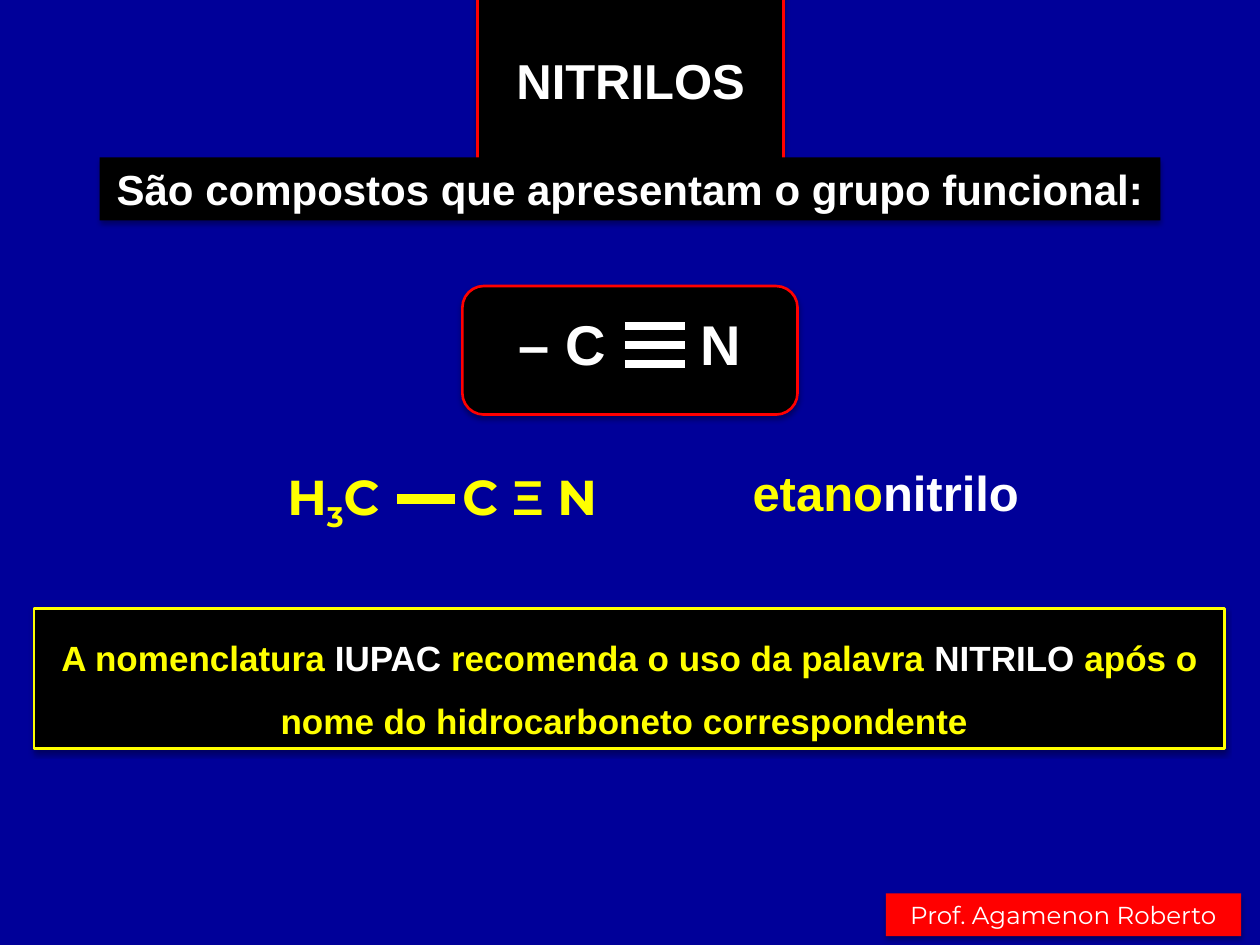
"""Build the slide that introduces the nitrile functional group."""
from dataclasses import dataclass

import lxml.etree
import pptx
import pptx.dml.color
import pptx.enum.shapes
import pptx.enum.text
import pptx.oxml.ns
import pptx.util

Inches = pptx.util.Inches
Pt = pptx.util.Pt
qn = pptx.oxml.ns.qn
Anchor = pptx.enum.text.MSO_ANCHOR
Align = pptx.enum.text.PP_ALIGN
Preset = pptx.enum.shapes.MSO_SHAPE

BLACK, WHITE, YELLOW, RED, NAVY = "000000", "FFFFFF", "FFFF00", "FF0000", "000099"


@dataclass(frozen=True)
class Piece:
    text: str
    color: str = WHITE
    font: str = "Arial"
    bold: bool = True
    baseline: int = 0


@dataclass(frozen=True)
class Label:
    box: tuple[float, float, float, float]
    pieces: tuple[Piece, ...]
    size: float
    fill: str | None = None
    border: str | None = None
    anchor: Anchor = Anchor.TOP
    wrap: bool = False
    spacing: float = 1.0


@dataclass(frozen=True)
class Bond:
    left: float
    right: float
    y: float
    color: str
    width: float


def rgb(color: str) -> pptx.dml.color.RGBColor:
    return pptx.dml.color.RGBColor.from_string(color)


def add_shadow(shape) -> None:
    shape.shadow.inherit = False
    effects = shape._element.spPr.find(qn("a:effectLst"))
    shadow = lxml.etree.SubElement(
        effects, qn("a:outerShdw"), blurRad=str(Pt(3.1)), dist=str(Pt(1.8)),
        dir="5400000", rotWithShape="0")
    color = lxml.etree.SubElement(shadow, qn("a:srgbClr"), val=BLACK)
    lxml.etree.SubElement(color, qn("a:alpha"), val="35000")


def style_panel(shape, fill: str, border: str | None) -> None:
    shape.fill.solid()
    shape.fill.fore_color.rgb = rgb(fill)
    if border:
        shape.line.color.rgb = rgb(border)
        shape.line.width = Pt(1.5)
    else:
        shape.line.fill.background()
    add_shadow(shape)


def write_label(shape, label: Label) -> None:
    shape.left, shape.top, shape.width, shape.height = map(Inches, label.box)
    if label.fill:
        style_panel(shape, label.fill, label.border)
    frame = shape.text_frame
    frame.word_wrap = label.wrap
    frame.auto_size = pptx.enum.text.MSO_AUTO_SIZE.SHAPE_TO_FIT_TEXT
    frame.vertical_anchor = label.anchor
    paragraph = frame.paragraphs[0]
    paragraph.alignment = Align.CENTER
    paragraph.line_spacing = label.spacing
    for piece in label.pieces:
        run = paragraph.add_run()
        run.text = piece.text
        run.font.size = Pt(label.size)
        run.font.name = piece.font
        run.font.bold = piece.bold
        run.font.color.rgb = rgb(piece.color)
        if piece.baseline:
            run._r.get_or_add_rPr().set("baseline", str(piece.baseline * 1000))


def add_label(shapes, label: Label):
    box = tuple(map(Inches, label.box))
    shape = shapes.add_shape(Preset.RECTANGLE, *box) if label.fill else shapes.add_textbox(*box)
    write_label(shape, label)
    return shape


def add_bond(shapes, bond: Bond) -> None:
    connector = shapes.add_connector(
        pptx.enum.shapes.MSO_CONNECTOR.STRAIGHT,
        Inches(bond.left), Inches(bond.y), Inches(bond.right), Inches(bond.y))
    connector.line.color.rgb = rgb(bond.color)
    connector.line.width = Pt(bond.width)
    lxml.etree.SubElement(connector._element.spPr, qn("a:effectLst"))


def add_functional_group(slide) -> None:
    shapes = slide.shapes.add_group_shape().shapes
    panel = shapes.add_shape(
        Preset.ROUNDED_RECTANGLE, Inches(3.67), Inches(2.27), Inches(2.66), Inches(1.02))
    style_panel(panel, BLACK, RED)
    add_label(shapes, Label((4.02, 2.41, 0.89, 0.63), (Piece("– C"),), 32))
    add_label(shapes, Label((5.46, 2.41, 0.52, 0.63), (Piece("N"),), 32))
    for index in range(3):
        add_bond(shapes, Bond(4.96, 5.44, 2.59 + 0.15 * index, WHITE, 4.5))


def add_formula(slide) -> None:
    shapes = slide.shapes.add_group_shape().shapes
    pieces = (
        Piece("H", YELLOW, "Montserrat"),
        Piece("3", YELLOW, "Montserrat", baseline=-25),
        Piece("C\tC ", YELLOW, "Montserrat"),
        Piece("Ξ", YELLOW),
        Piece(" N", YELLOW, "Montserrat"),
    )
    formula = add_label(shapes, Label((2.05, 3.65, 2.95, 0.57), pieces, 28, wrap=True))
    formula.text_frame.margin_left = Inches(0.23)
    paragraph = formula.text_frame.paragraphs[0]
    paragraph.alignment = Align.LEFT
    stops = lxml.etree.SubElement(paragraph._p.get_or_add_pPr(), qn("a:tabLst"))
    lxml.etree.SubElement(stops, qn("a:tab"), pos=str(Inches(1.39)), algn="l")
    add_bond(shapes, Bond(3.15, 3.61, 3.96, YELLOW, 6))


def main() -> None:
    presentation = pptx.Presentation()
    presentation.slide_width = Inches(10)
    presentation.slide_height = Inches(7.5)
    slide = presentation.slides.add_slide(presentation.slide_layouts[5])
    slide.background.fill.solid()
    slide.background.fill.fore_color.rgb = rgb(NAVY)

    title = Label((3.79, 0.35, 2.43, 0.57), (Piece("NITRILOS"),), 28,
                  BLACK, RED, Anchor.MIDDLE, True)
    definition = Label((0.79, 1.25, 8.42, 0.5),
                       (Piece("São compostos que apresentam o grupo funcional:"),),
                       24, BLACK, anchor=Anchor.MIDDLE)
    naming_rule = Label((0.27, 4.83, 9.45, 1.11), (
        Piece("A nomenclatura ", YELLOW),
        Piece("IUPAC"),
        Piece(" recomenda o uso da palavra ", YELLOW),
        Piece("NITRILO"),
        Piece(" após o nome do hidrocarboneto correspondente ", YELLOW),
    ), 20, BLACK, YELLOW, Anchor.MIDDLE, True, 1.5)
    compound_name = Label((5.86, 3.62, 2.34, 0.57),
                          (Piece("etano", YELLOW), Piece("nitrilo")), 28)
    author = Label((7.03, 7.09, 2.82, 0.34),
                   (Piece("Prof. Agamenon Roberto", font="Montserrat", bold=False),), 14, RED)

    write_label(slide.shapes.title, title)
    add_label(slide.shapes, definition)
    add_functional_group(slide)
    add_label(slide.shapes, naming_rule)
    add_label(slide.shapes, compound_name)
    add_formula(slide)
    add_label(slide.shapes, author)
    presentation.save("out.pptx")


if __name__ == "__main__":
    main()
